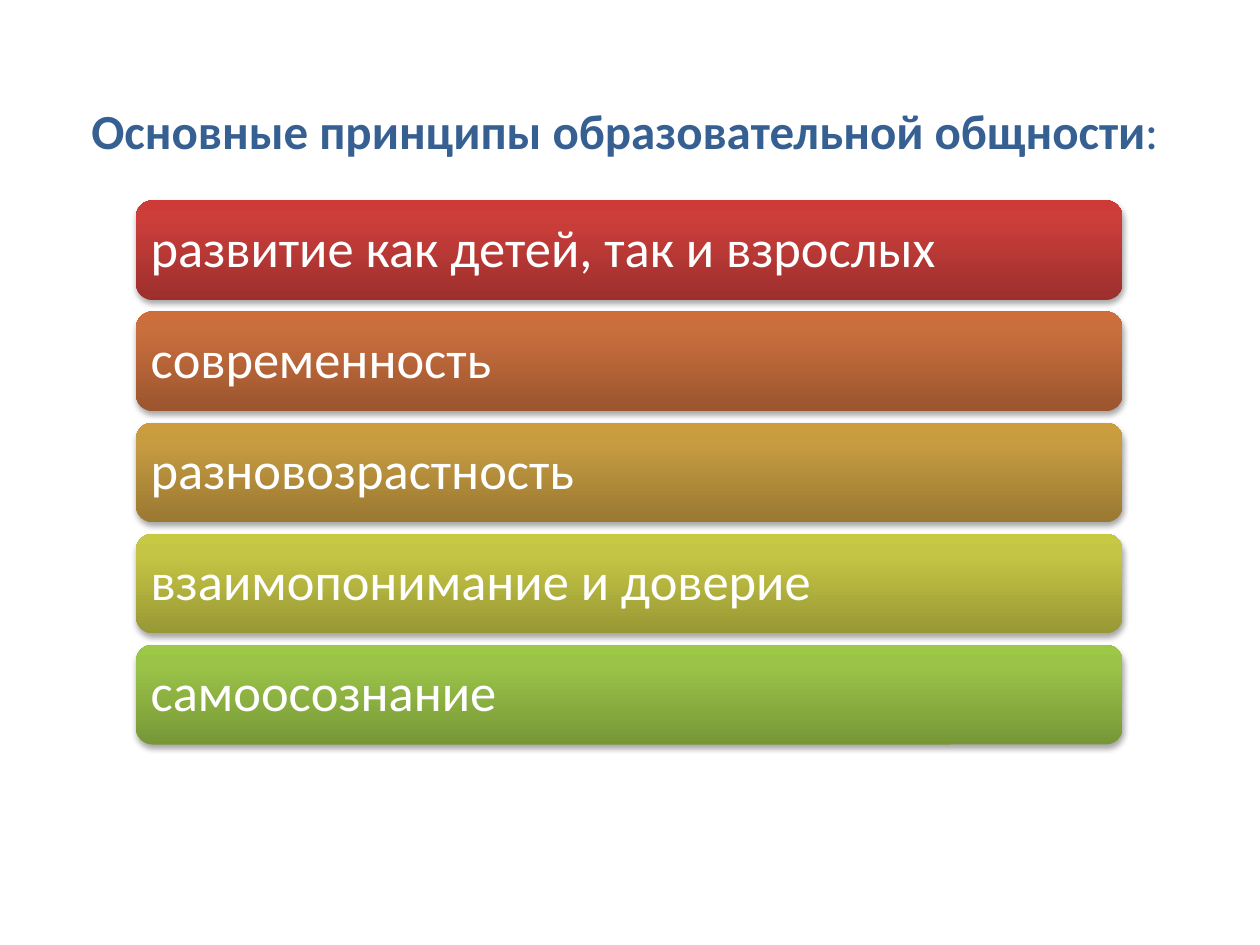
"""Build a slide listing the main principles of an educational community."""
import pptx
import pptx.dml.color
import pptx.enum.shapes
import pptx.enum.text
import pptx.oxml
import pptx.oxml.ns
import pptx.util
from pptx.util import Cm

FONT = "Calibri"
TITLE = "Основные принципы образовательной общности"
PRINCIPLES = [
    ("развитие как детей, так и взрослых", ("9C2F2D", "CB3E3A", "CE3B37")),
    ("современность", ("9B552F", "C96E3D", "CD6E3B")),
    ("разновозрастность", ("997832", "C79C41", "CB9D3F")),
    ("взаимопонимание и доверие", ("989835", "C5C545", "C8C942")),
    ("самоосознание", ("779737", "9BC348", "9DC746")),
]
STOPS = (0, 80, 100)
LEFT, TOP, WIDTH, HEIGHT, PITCH = 2.74, 4.04, 19.89, 2.01, 2.24


def rgb(value):
    return pptx.dml.color.RGBColor.from_string(value)


def add_run(p, text, size, color, bold=False):
    r = p.add_run()
    r.text = text
    r.font.name = FONT
    r.font.size = pptx.util.Pt(size)
    r.font.bold = bold
    r.font.color.rgb = rgb(color)


def setup_frame(tf, anchor, inset_x, inset_y):
    tf.word_wrap = True
    tf.auto_size = pptx.enum.text.MSO_AUTO_SIZE.NONE
    tf.vertical_anchor = anchor
    tf.margin_left = tf.margin_right = Cm(inset_x)
    tf.margin_top = tf.margin_bottom = Cm(inset_y)


def xml(body):
    return pptx.oxml.parse_xml(body.replace(" ", " " + pptx.oxml.ns.nsdecls("a") + " ", 1))


def set_gradient(sp, colors):
    sp.fill.gradient()
    old = sp._element.spPr.find(pptx.oxml.ns.qn("a:gradFill"))
    stops = "".join(
        f'<a:gs pos="{pos * 1000}"><a:srgbClr val="{color}"/></a:gs>'
        for pos, color in zip(STOPS, colors))
    new = xml(f'<a:gradFill rotWithShape="1"><a:gsLst>{stops}</a:gsLst>'
              '<a:lin ang="16200000" scaled="0"/></a:gradFill>')
    old.getparent().replace(old, new)


def set_shadow(sp):
    sp.shadow.inherit = False
    effects = sp._element.spPr.find(pptx.oxml.ns.qn("a:effectLst"))
    effects.append(xml(
        '<a:outerShdw blurRad="40000" dist="23000" dir="5400000" rotWithShape="0">'
        '<a:srgbClr val="000000"><a:alpha val="35000"/></a:srgbClr></a:outerShdw>'))


def add_title(s):
    sp = s.shapes.title
    sp.left, sp.top, sp.width, sp.height = Cm(0.43), Cm(1.9), Cm(24.33), Cm(1.45)
    setup_frame(sp.text_frame, pptx.enum.text.MSO_ANCHOR.TOP, 0.25, 0.13)
    p = sp.text_frame.paragraphs[0]
    p.alignment = pptx.enum.text.PP_ALIGN.CENTER
    add_run(p, TITLE, 28, "376092", bold=True)
    add_run(p, ":", 28, "376092")


def add_bar(s, index, text, colors):
    sp = s.shapes.add_shape(
        pptx.enum.shapes.MSO_SHAPE.ROUNDED_RECTANGLE,
        Cm(LEFT), Cm(TOP + index * PITCH), Cm(WIDTH), Cm(HEIGHT))
    sp.line.fill.background()
    set_gradient(sp, colors)
    set_shadow(sp)
    setup_frame(sp.text_frame, pptx.enum.text.MSO_ANCHOR.MIDDLE, 0.2, 0.2)
    p = sp.text_frame.paragraphs[0]
    p.alignment = pptx.enum.text.PP_ALIGN.LEFT
    p.line_spacing = 0.9
    add_run(p, text, 30, "FFFFFF")


def main():
    prs = pptx.Presentation()
    prs.slide_width, prs.slide_height = Cm(25.4), Cm(19.05)
    s = prs.slides.add_slide(prs.slide_layouts.get_by_name("Title Only"))
    add_title(s)
    for index, (text, colors) in enumerate(PRINCIPLES):
        add_bar(s, index, text, colors)
    prs.save("out.pptx")


if __name__ == "__main__":
    main()
